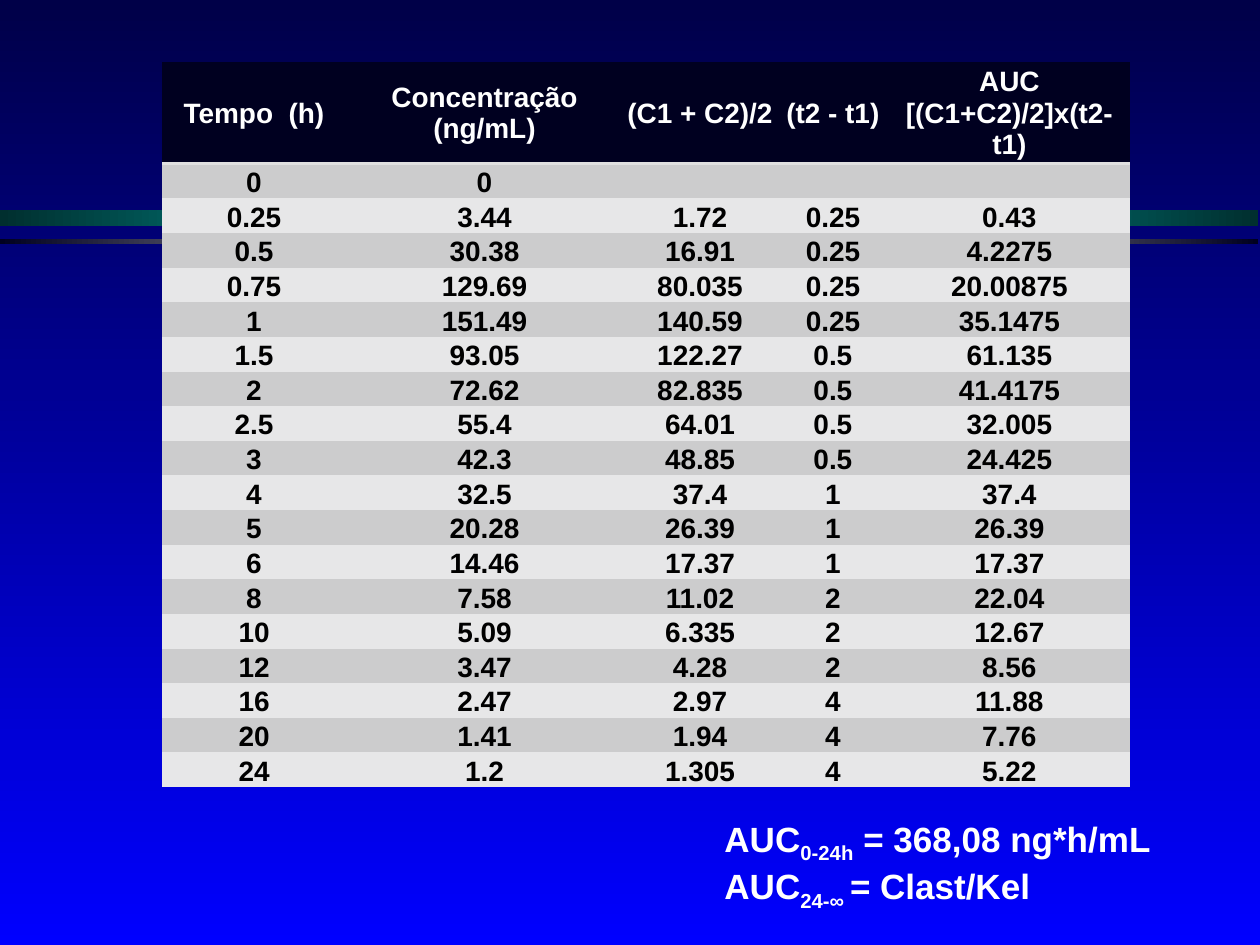
from copy import deepcopy
from dataclasses import dataclass

from lxml.etree import SubElement
from pptx import Presentation
from pptx.dml.color import RGBColor
from pptx.enum.shapes import MSO_SHAPE
from pptx.enum.text import MSO_ANCHOR, PP_ALIGN
from pptx.oxml.ns import qn
from pptx.util import Pt

PX = 914400 // 126


@dataclass(frozen=True)
class Theme:
    font: str = "Arial"
    table_size: int = 16
    result_size: int = 20
    light_text: str = "FFFFFF"
    dark_text: str = "000000"
    header: str = "000020"
    header_rule: str = "E0E0E0"
    bands: tuple = ("CCCCCD", "E7E7E8")
    background: tuple = ("000048", "0000FF")
    teal_bar: tuple = ("002F2F", "00CECE", "002F2F")
    gray_bar: tuple = ("000020", "F3F3F3", "000020")


THEME = Theme()

HEADINGS = ("Tempo  (h)", "Concentração (ng/mL)", "(C1 + C2)/2", "(t2 - t1)",
            "AUC [(C1+C2)/2]x(t2-t1)")
SAMPLES = [
    ("0", "0", "", "", ""),
    ("0.25", "3.44", "1.72", "0.25", "0.43"),
    ("0.5", "30.38", "16.91", "0.25", "4.2275"),
    ("0.75", "129.69", "80.035", "0.25", "20.00875"),
    ("1", "151.49", "140.59", "0.25", "35.1475"),
    ("1.5", "93.05", "122.27", "0.5", "61.135"),
    ("2", "72.62", "82.835", "0.5", "41.4175"),
    ("2.5", "55.4", "64.01", "0.5", "32.005"),
    ("3", "42.3", "48.85", "0.5", "24.425"),
    ("4", "32.5", "37.4", "1", "37.4"),
    ("5", "20.28", "26.39", "1", "26.39"),
    ("6", "14.46", "17.37", "1", "17.37"),
    ("8", "7.58", "11.02", "2", "22.04"),
    ("10", "5.09", "6.335", "2", "12.67"),
    ("12", "3.47", "4.28", "2", "8.56"),
    ("16", "2.47", "2.97", "4", "11.88"),
    ("20", "1.41", "1.94", "4", "7.76"),
    ("24", "1.2", "1.305", "4", "5.22"),
]
# Each result line: text, subscript, text
RESULTS = [("AUC", "0-24h", " = 368,08 ng*h/mL"),
           ("AUC", "24-∞ ", "= Clast/Kel")]

BARS = [(210, 16, THEME.teal_bar), (239, 5, THEME.gray_bar)]
BAR_WIDTH = 1258
TABLE_BOX = (162, 62, 968, 723)
COLUMN_WIDTHS = (184, 277, 154, 112, 241)
HEADER_HEIGHT, ROW_HEIGHT = 44, 28
RESULT_BOX = (712, 811, 462, 97)
NO_STYLE = "{2D5ABB26-0587-4C30-8999-92F81FD0307C}"


def emu(lengths):
    return [length * PX for length in lengths]


def fill_gradient(fill, colors, angle=0):
    """Spread the colours evenly; the angle runs counter-clockwise."""
    fill.gradient()
    fill.gradient_angle = angle
    stops = fill._xPr.find(qn("a:gradFill")).find(qn("a:gsLst"))
    for _ in colors[2:]:
        stops.append(deepcopy(stops[0]))
    for index, (stop, color) in enumerate(zip(fill.gradient_stops, colors)):
        stop.position = index / (len(colors) - 1)
        stop.color.rgb = RGBColor.from_string(color)


def style_run(run, size, color):
    font = run.font
    font.name, font.size, font.bold = THEME.font, Pt(size), True
    font.color.rgb = RGBColor.from_string(color)


def add_bar(slide, top, height, colors):
    bar = slide.shapes.add_shape(MSO_SHAPE.RECTANGLE, *emu((0, top, BAR_WIDTH, height)))
    bar.shadow.inherit = False
    bar.line.fill.background()
    fill_gradient(bar.fill, colors)


def add_bottom_rule(cell):
    properties = cell._tc.get_or_add_tcPr()
    rule = SubElement(properties, qn("a:lnB"), w=str(Pt(2)))
    solid = SubElement(rule, qn("a:solidFill"))
    SubElement(solid, qn("a:srgbClr"), val=THEME.header_rule)
    properties.insert(0, rule)


def fill_cell(cell, content, background, color, anchor):
    cell.margin_left = cell.margin_right = cell.margin_top = PX
    cell.margin_bottom = 0
    cell.vertical_anchor = anchor
    cell.fill.solid()
    cell.fill.fore_color.rgb = RGBColor.from_string(background)
    paragraph = cell.text_frame.paragraphs[0]
    paragraph.text = content
    paragraph.alignment = PP_ALIGN.CENTER
    for run in paragraph.runs:
        style_run(run, THEME.table_size, color)
    if not content:
        # An empty cell takes its line height from the paragraph end mark
        paragraph._p.get_or_add_endParaRPr().set("sz", str(THEME.table_size * 100))


def add_samples_table(slide):
    frame = slide.shapes.add_table(len(SAMPLES) + 1, len(HEADINGS), *emu(TABLE_BOX))
    table = frame.table
    table.horz_banding = False
    table._tbl.tblPr.find(qn("a:tableStyleId")).text = NO_STYLE
    for column, width in zip(table.columns, COLUMN_WIDTHS):
        column.width = width * PX
    for index, row in enumerate(table.rows):
        row.height = (ROW_HEIGHT if index else HEADER_HEIGHT) * PX
    frame.height = TABLE_BOX[3] * PX

    for cell, heading in zip(table.rows[0].cells, HEADINGS):
        fill_cell(cell, heading, THEME.header, THEME.light_text, MSO_ANCHOR.MIDDLE)
        add_bottom_rule(cell)
    for index, sample in enumerate(SAMPLES):
        band = THEME.bands[index % 2]
        for cell, value in zip(table.rows[index + 1].cells, sample):
            fill_cell(cell, value, band, THEME.dark_text, MSO_ANCHOR.BOTTOM)


def add_results(slide):
    text_frame = slide.shapes.add_textbox(*emu(RESULT_BOX)).text_frame
    text_frame.word_wrap = False
    for index, parts in enumerate(RESULTS):
        paragraph = text_frame.add_paragraph() if index else text_frame.paragraphs[0]
        for position, part in enumerate(parts):
            run = paragraph.add_run()
            run.text = part
            style_run(run, THEME.result_size, THEME.light_text)
            if position == 1:
                run.font._element.set("baseline", "-25000")


def main():
    presentation = Presentation()
    presentation.slide_width, presentation.slide_height = emu((1260, 945))
    slide = presentation.slides.add_slide(presentation.slide_layouts[6])
    fill_gradient(slide.background.fill, THEME.background, angle=270)
    for top, height, colors in BARS:
        add_bar(slide, top, height, colors)
    add_results(slide)
    add_samples_table(slide)
    presentation.save("out.pptx")


if __name__ == "__main__":
    main()
